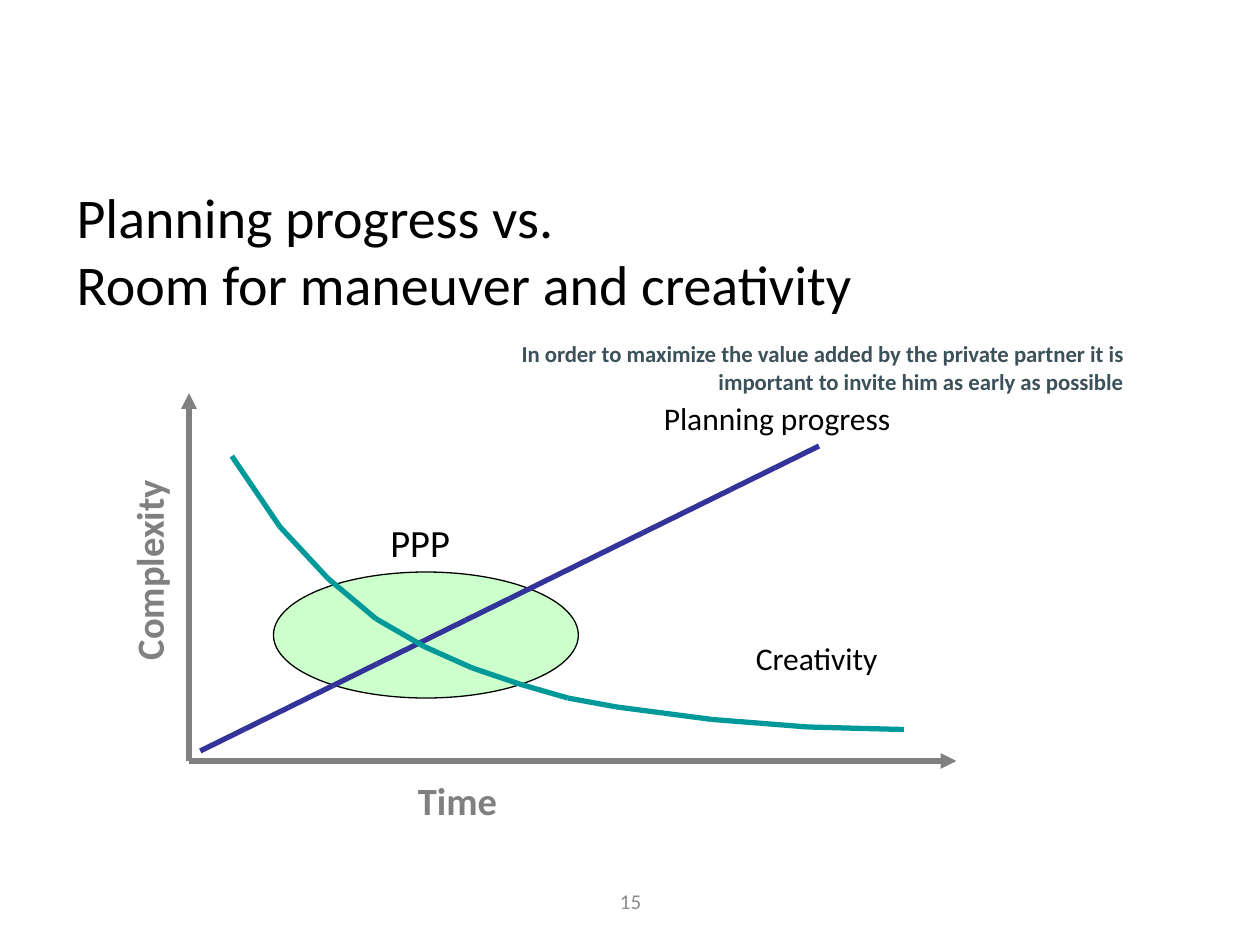
from itertools import pairwise

from lxml import etree
from pptx import Presentation
from pptx.dml.color import RGBColor
from pptx.enum.shapes import MSO_CONNECTOR, MSO_SHAPE
from pptx.enum.text import MSO_ANCHOR, PP_ALIGN
from pptx.oxml.ns import qn
from pptx.util import Inches, Pt

STRAIGHT, ELLIPSE = MSO_CONNECTOR.STRAIGHT, MSO_SHAPE.OVAL
LEFT, CENTER, RIGHT = PP_ALIGN.LEFT, PP_ALIGN.CENTER, PP_ALIGN.RIGHT
TOP, MIDDLE = MSO_ANCHOR.TOP, MSO_ANCHOR.MIDDLE

BLACK = RGBColor(0x00, 0x00, 0x00)
GRAY = RGBColor(0x80, 0x80, 0x80)
PAGE_GRAY = RGBColor(0x8C, 0x8C, 0x8C)
SLATE = RGBColor(0x3C, 0x51, 0x59)
INDIGO = RGBColor(0x33, 0x33, 0x99)
TEAL = RGBColor(0x00, 0x99, 0x99)
PALE_GREEN = RGBColor(0xCC, 0xFF, 0xCC)

# The slide is a grid of 100 columns by 75 rows
COLUMNS, ROWS = 100, 75
WIDTH, HEIGHT = Inches(10), Inches(7.5)

ORIGIN = (15, 60.4)
PROGRESS_START, PROGRESS_END, PROGRESS_STEPS = (15.9, 59.6), (65, 35.4), 14
CREATIVITY_START, CREATIVITY_STEP = 18.4, 3.81
CREATIVITY_ROWS = [36.2, 41.8, 45.9, 49.1, 51.3, 53, 54.3, 55.4,
                   56.1, 56.6, 57.1, 57.4, 57.7, 57.8, 57.9]


def across(columns):
    return round(WIDTH * columns / COLUMNS)


def down(rows):
    return round(HEIGHT * rows / ROWS)


def place(column, row, columns, rows):
    return across(column), down(row), across(columns), down(rows)


def add_text(page, area, lines, size, color, bold=False, align=LEFT,
             anchor=TOP, wrap=True, rotation=0):
    box = page.shapes.add_textbox(*place(*area))
    box.rotation = rotation
    frame = box.text_frame
    frame.word_wrap = wrap
    frame.vertical_anchor = anchor
    frame.text = lines
    for para in frame.paragraphs:
        para.alignment = align
        para.font.name = "Calibri"
        para.font.size = Pt(size)
        para.font.bold = bold
        para.font.color.rgb = color


def add_line(shapes, start, end, color, arrow=False):
    line = shapes.add_connector(STRAIGHT, across(start[0]), down(start[1]),
                                across(end[0]), down(end[1]))
    line.line.color.rgb = color
    line.line.width = Pt(3)
    if arrow:
        etree.SubElement(line.line._get_or_add_ln(), qn("a:tailEnd"), type="triangle")
    etree.SubElement(line._element.spPr, qn("a:effectLst"))


def add_curve(page, points, color):
    group = page.shapes.add_group_shape()
    for start, end in pairwise(points):
        add_line(group.shapes, start, end, color)


def add_ellipse(page, area):
    ellipse = page.shapes.add_shape(ELLIPSE, *place(*area))
    ellipse.shadow.inherit = False
    ellipse.fill.solid()
    ellipse.fill.fore_color.rgb = PALE_GREEN
    ellipse.line.color.rgb = BLACK
    ellipse.line.width = Pt(0.75)


def progress_points():
    (x1, y1), (x2, y2) = PROGRESS_START, PROGRESS_END
    shares = [step / PROGRESS_STEPS for step in range(PROGRESS_STEPS + 1)]
    return [(x1 + (x2 - x1) * share, y1 + (y2 - y1) * share) for share in shares]


def creativity_points():
    return [(CREATIVITY_START + CREATIVITY_STEP * step, row)
            for step, row in enumerate(CREATIVITY_ROWS)]


def main():
    deck = Presentation()
    deck.slide_width, deck.slide_height = WIDTH, HEIGHT
    page = deck.slides.add_slide(deck.slide_layouts[6])

    # Page number, title and message
    add_text(page, (34.2, 69.5, 31.7, 4), "15", 12, PAGE_GRAY,
             align=CENTER, anchor=MIDDLE)
    add_text(page, (5.1, 13.9, 65.7, 11.8),
             "Planning progress vs.\nRoom for maneuver and creativity",
             32, BLACK, anchor=MIDDLE, wrap=False)
    add_text(page, (35, 23.3, 55.1, 11.7),
             "In order to maximize the value added by the private partner it is "
             "important to invite him as early as possible",
             13, SLATE, bold=True, align=RIGHT, anchor=MIDDLE)

    # Overlap zone and axes
    add_ellipse(page, (21.7, 45.4, 24.2, 10))
    for tip in [(15, 31.2), (75.9, 60.4)]:
        add_line(page.shapes, ORIGIN, tip, GRAY, arrow=True)
    add_text(page, (26.7, 61.2, 19.2, 4.7), "Time", 22, GRAY,
             bold=True, align=CENTER)

    # Curves
    add_curve(page, progress_points(), INDIGO)
    add_curve(page, creativity_points(), TEAL)

    # Labels
    add_text(page, (51.7, 31.2, 33.3, 4), "Planning progress", 18, BLACK)
    add_text(page, (59, 50.2, 39.2, 4), "Creativity", 18, BLACK)
    add_text(page, (2.2, 42.9, 19.2, 4.7), "Complexity", 22, GRAY,
             bold=True, align=CENTER, rotation=270)
    add_text(page, (30, 40.7, 8.1, 4.7), "PPP", 22, BLACK, wrap=False)

    deck.save("out.pptx")


if __name__ == "__main__":
    main()
